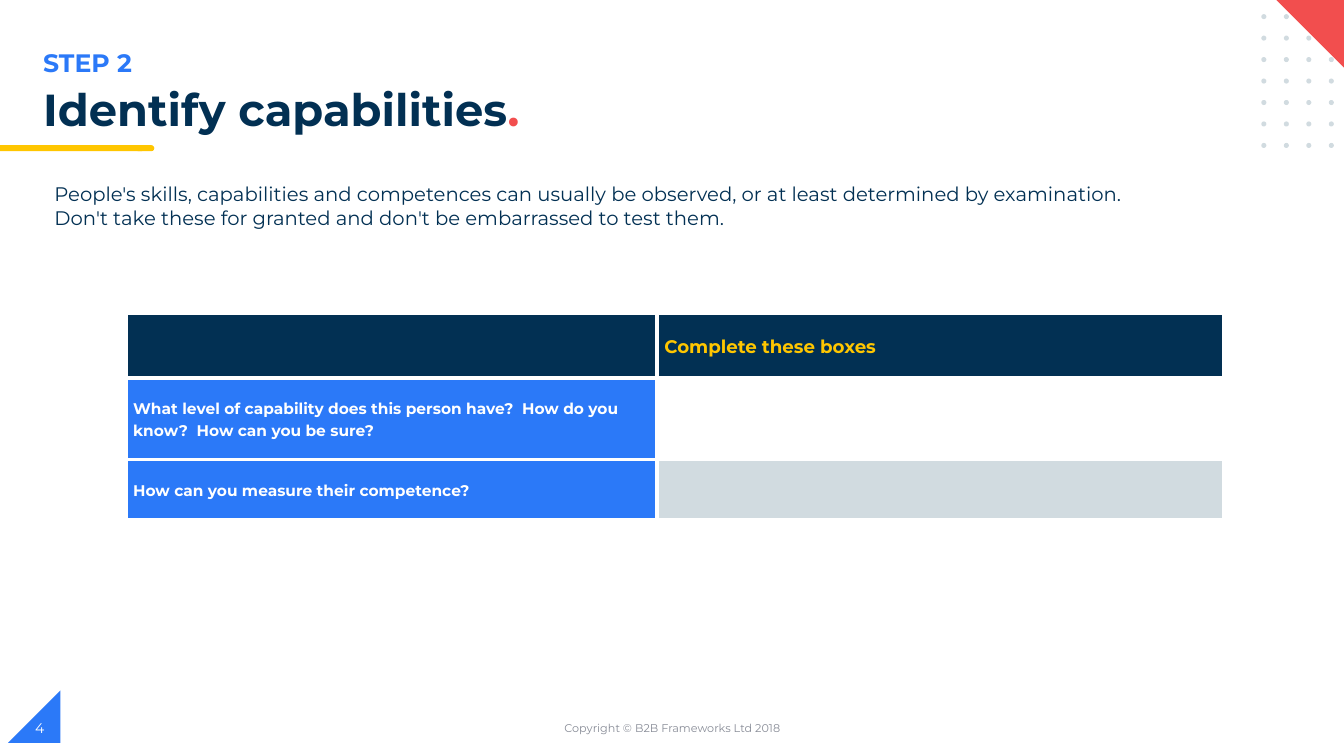
import pptx
import pptx.dml.color
import pptx.enum.shapes
import pptx.enum.text
import pptx.oxml
import pptx.oxml.ns
import pptx.util

Inches = pptx.util.Inches
Shape = pptx.enum.shapes.MSO_SHAPE
Align = pptx.enum.text.PP_ALIGN
Anchor = pptx.enum.text.MSO_ANCHOR

# Content
NAVY, BLUE, YELLOW, RED = "023053", "2B79F8", "FFC600", "F24E4E"
PALE, GREY, WHITE = "D1DBE0", "888C97", "FFFFFF"
FONT = "Montserrat"

INTRO = (
    "People's skills, capabilities and competences can usually be observed, "
    "or at least determined by examination. Don't take these for granted "
    "and don't be embarrassed to test them."
)
# Each text box: place, runs of (text, colour), format
TEXTS = [
    ((0.33, 0.42, 6.69, 0.4), [("STEP 2", BLUE)], dict(size=18, bold=True)),
    ((0.33, 0.82, 11.15, 0.56), [("Identify capabilities", NAVY), (".", RED)],
     dict(size=32, bold=True, spacing=0.9)),
    ((0.44, 1.76, 11.09, 0.57), [(INTRO, NAVY)], dict(size=14)),
    ((4.42, 7.02, 4.5, 0.4), [("Copyright © B2B Frameworks Ltd 2018", GREY)],
     dict(size=8, align=Align.CENTER, anchor=Anchor.MIDDLE)),
    ((0.25, 7.02, 3, 0.4), [("4", WHITE)], dict(size=10, anchor=Anchor.MIDDLE)),
]
# Each shape: kind, place, colour, rotation
SHAPES = [
    (Shape.RIGHT_TRIANGLE, (0.08, 6.85, 0.52, 0.52), BLUE, 270),
    (Shape.FLOWCHART_TERMINATOR, (1.34, 1.44, 0.19, 0.06), YELLOW, 0),
    (Shape.RECTANGLE, (0, 1.44, 1.41, 0.06), YELLOW, 0),
]
CORNER = (Shape.RIGHT_TRIANGLE, (12.65, -0.01, 0.72, 0.72), RED, 180)
DOT_ROWS, DOT_COLUMNS = 7, 4
DOT_LEFT, DOT_TOP, DOT_SIZE = 12.51, 0.14, 0.05
DOT_STEP_X, DOT_STEP_Y = 0.223, 0.213

TABLE_LEFT, TABLE_TOP = 1.25, 3.11
COLUMN_WIDTHS = [5.27, 5.62]
ROW_HEIGHTS = [0.64, 0.81, 0.6]
# Each cell: text, fill, text colour, size
CELLS = [
    [("", NAVY, WHITE, 13), ("Complete these boxes", NAVY, YELLOW, 13)],
    [("What level of capability does this person have?  How do you know?  "
      "How can you be sure?", BLUE, WHITE, 11), ("", WHITE, NAVY, 11)],
    [("How can you measure their competence?", BLUE, WHITE, 11),
     ("", PALE, NAVY, 11)],
]


def colour(hex_string):
    return pptx.dml.color.RGBColor.from_string(hex_string)


def paint(target, hex_string):
    target.fill.solid()
    target.fill.fore_color.rgb = colour(hex_string)


def write(frame, runs, size, bold=False, spacing=None, align=Align.LEFT,
          anchor=Anchor.TOP):
    frame.word_wrap = True
    frame.vertical_anchor = anchor
    para = frame.paragraphs[0]
    para.alignment = align
    if spacing:
        para.line_spacing = spacing
    para.font.size = pptx.util.Pt(size)
    for text, hex_string in runs:
        span = para.add_run()
        span.text = text
        span.font.name = FONT
        span.font.size = pptx.util.Pt(size)
        span.font.bold = bold
        span.font.color.rgb = colour(hex_string)


def draw(page, kind, place, hex_string, rotation=0):
    shape = page.shapes.add_shape(kind, *map(Inches, place))
    shape.shadow.inherit = False
    shape.rotation = rotation
    paint(shape, hex_string)
    shape.line.fill.background()


def set_borders(cell, hex_string, points):
    properties = cell._tc.get_or_add_tcPr()
    for side in ("lnL", "lnR", "lnT", "lnB"):
        properties.append(pptx.oxml.parse_xml(
            f'<a:{side} {pptx.oxml.ns.nsdecls("a")} w="{pptx.util.Pt(points)}">'
            f'<a:solidFill><a:srgbClr val="{hex_string}"/></a:solidFill>'
            f'</a:{side}>'))


def add_grid(page):
    table = page.shapes.add_table(
        len(ROW_HEIGHTS), len(COLUMN_WIDTHS), Inches(TABLE_LEFT),
        Inches(TABLE_TOP), Inches(sum(COLUMN_WIDTHS)),
        Inches(sum(ROW_HEIGHTS))).table
    for column, width in zip(table.columns, COLUMN_WIDTHS):
        column.width = Inches(width)
    for row, height, contents in zip(table.rows, ROW_HEIGHTS, CELLS):
        row.height = Inches(height)
        for cell, (text, fill, ink, size) in zip(row.cells, contents):
            set_borders(cell, WHITE, 3)
            paint(cell, fill)
            cell.margin_left = cell.margin_right = Inches(0.07)
            cell.margin_top = cell.margin_bottom = 0
            cell.vertical_anchor = Anchor.MIDDLE
            if text:
                write(cell.text_frame, [(text, ink)], size, bold=True,
                      spacing=1.15, anchor=None)


def main():
    deck = pptx.Presentation()
    deck.slide_width, deck.slide_height = Inches(13.33), Inches(7.5)
    page = deck.slides.add_slide(deck.slide_layouts[6])

    # Accents and dot grid, with the corner on top
    for shape in SHAPES:
        draw(page, *shape)
    for row in range(DOT_ROWS):
        for column in range(DOT_COLUMNS):
            draw(page, Shape.OVAL,
                 (DOT_LEFT + column * DOT_STEP_X, DOT_TOP + row * DOT_STEP_Y,
                  DOT_SIZE, DOT_SIZE), PALE)
    draw(page, *CORNER)

    # Text and table
    for place, runs, form in TEXTS:
        box = page.shapes.add_textbox(*map(Inches, place))
        write(box.text_frame, runs, **form)
    add_grid(page)

    deck.save("out.pptx")


if __name__ == "__main__":
    main()
